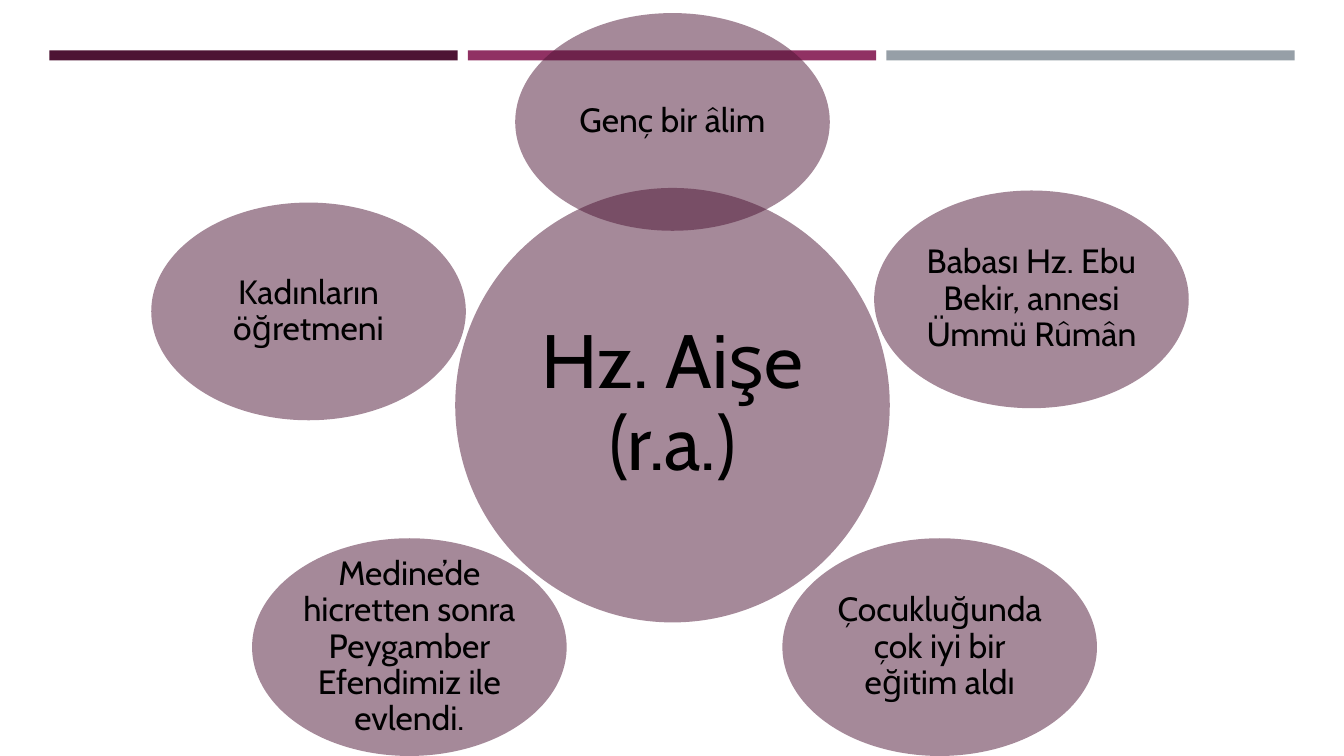
from dataclasses import dataclass

from lxml import etree
from pptx import Presentation
from pptx.dml.color import RGBColor
from pptx.enum.shapes import MSO_SHAPE
from pptx.enum.text import MSO_ANCHOR, PP_ALIGN
from pptx.oxml.ns import qn
from pptx.util import Inches, Pt

RECTANGLE = MSO_SHAPE.RECTANGLE
OVAL = MSO_SHAPE.OVAL
MIDDLE = MSO_ANCHOR.MIDDLE
CENTER = PP_ALIGN.CENTER


@dataclass(frozen=True)
class Theme:
    plum: str = "4D1434"
    magenta: str = "903163"
    grey: str = "969FA7"
    text: str = "000000"
    font: str = "Cabin"
    hub_size: int = 54
    petal_size: int = 24
    opacity: int = 50


THEME = Theme()
SLIDE_WIDTH, SLIDE_HEIGHT = 13.33, 7.5

BAR_COLORS = [THEME.plum, THEME.magenta, THEME.grey]
BAR_LEFT, BAR_TOP, BAR_WIDTH, BAR_HEIGHT, BAR_GAP = 0.49, 0.5, 4.05, 0.1, 0.1

HUB = ("Hz. Aişe (r.a.)", (6.67, 4.02))
HUB_DIAMETER = 4.31
PETALS = [
    ("Genç bir âlim", (6.67, 1.21)),
    ("Babası Hz. Ebu Bekir, annesi Ümmü Rûmân", (10.23, 2.97)),
    ("Çocukluğunda çok iyi bir eğitim aldı", (9.32, 6.42)),
    ("Medine’de hicretten sonra Peygamber Efendimiz ile evlendi.", (4.06, 6.42)),
    ("Kadınların öğretmeni", (3.06, 3.09)),
]
PETAL_WIDTH, PETAL_HEIGHT = 3.12, 2.16


def add_filled_shape(slide, kind, left, top, width, height, color):
    shape = slide.shapes.add_shape(
        kind, Inches(left), Inches(top), Inches(width), Inches(height))
    shape.shadow.inherit = False
    shape.fill.solid()
    shape.fill.fore_color.rgb = RGBColor.from_string(color)
    shape.line.fill.background()
    return shape


def add_bubble(slide, text, center, width, height, size, inset):
    left, top = center[0] - width / 2, center[1] - height / 2
    shape = add_filled_shape(slide, OVAL, left, top, width, height, THEME.plum)
    color = shape.fill._xPr.find(".//" + qn("a:srgbClr"))
    etree.SubElement(color, qn("a:alpha"), val=str(THEME.opacity * 1000))

    frame = shape.text_frame
    frame.word_wrap = True
    frame.vertical_anchor = MIDDLE
    frame.margin_left = frame.margin_right = Inches(inset)
    frame.margin_top = frame.margin_bottom = Inches(inset)
    paragraph = frame.paragraphs[0]
    paragraph.text = text
    paragraph.alignment = CENTER
    paragraph.line_spacing = 0.9
    paragraph.font.name = THEME.font
    paragraph.font.size = Pt(size)
    paragraph.font.color.rgb = RGBColor.from_string(THEME.text)


def main():
    presentation = Presentation()
    presentation.slide_width = Inches(SLIDE_WIDTH)
    presentation.slide_height = Inches(SLIDE_HEIGHT)
    slide = presentation.slides.add_slide(presentation.slide_layouts[6])

    for index, color in enumerate(BAR_COLORS):
        left = BAR_LEFT + index * (BAR_WIDTH + BAR_GAP)
        add_filled_shape(slide, RECTANGLE, left, BAR_TOP, BAR_WIDTH, BAR_HEIGHT, color)

    add_bubble(slide, *HUB, HUB_DIAMETER, HUB_DIAMETER, THEME.hub_size, 0.07)
    for text, center in PETALS:
        add_bubble(slide, text, center, PETAL_WIDTH, PETAL_HEIGHT, THEME.petal_size, 0.03)

    presentation.save("out.pptx")


if __name__ == "__main__":
    main()
